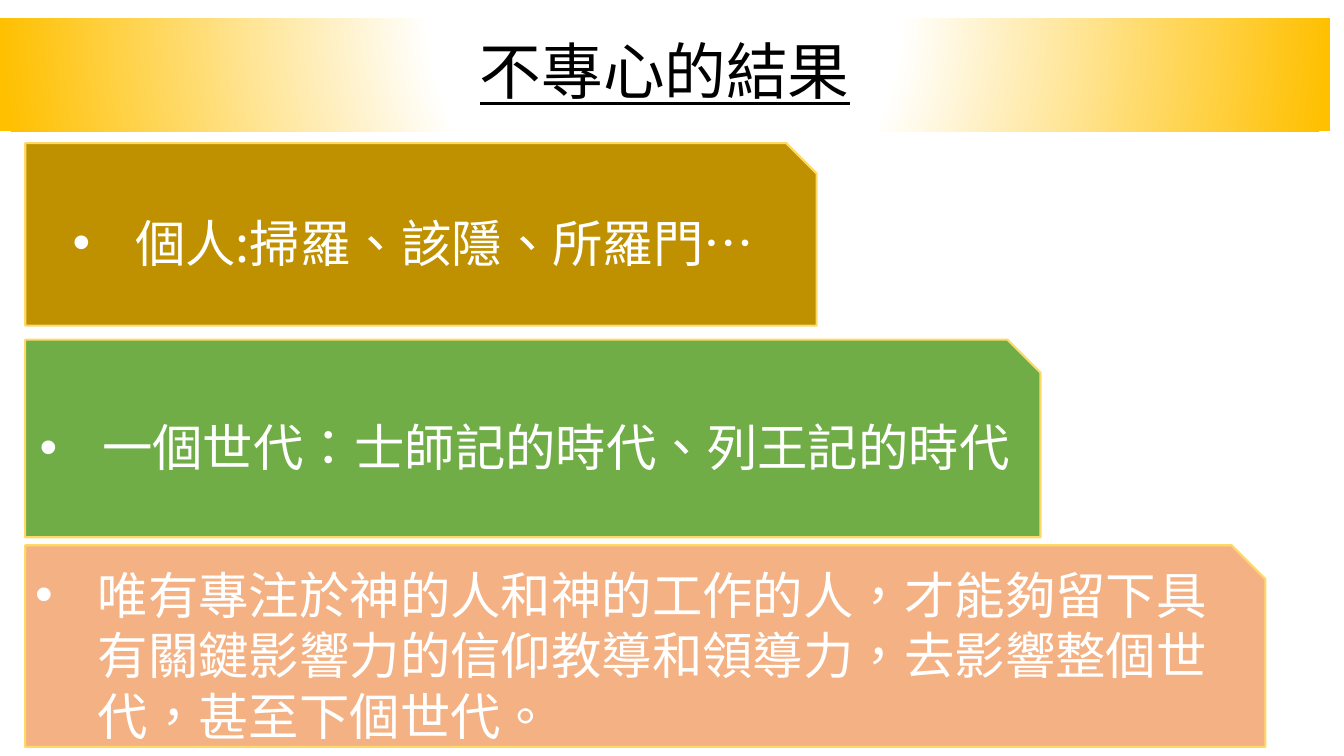
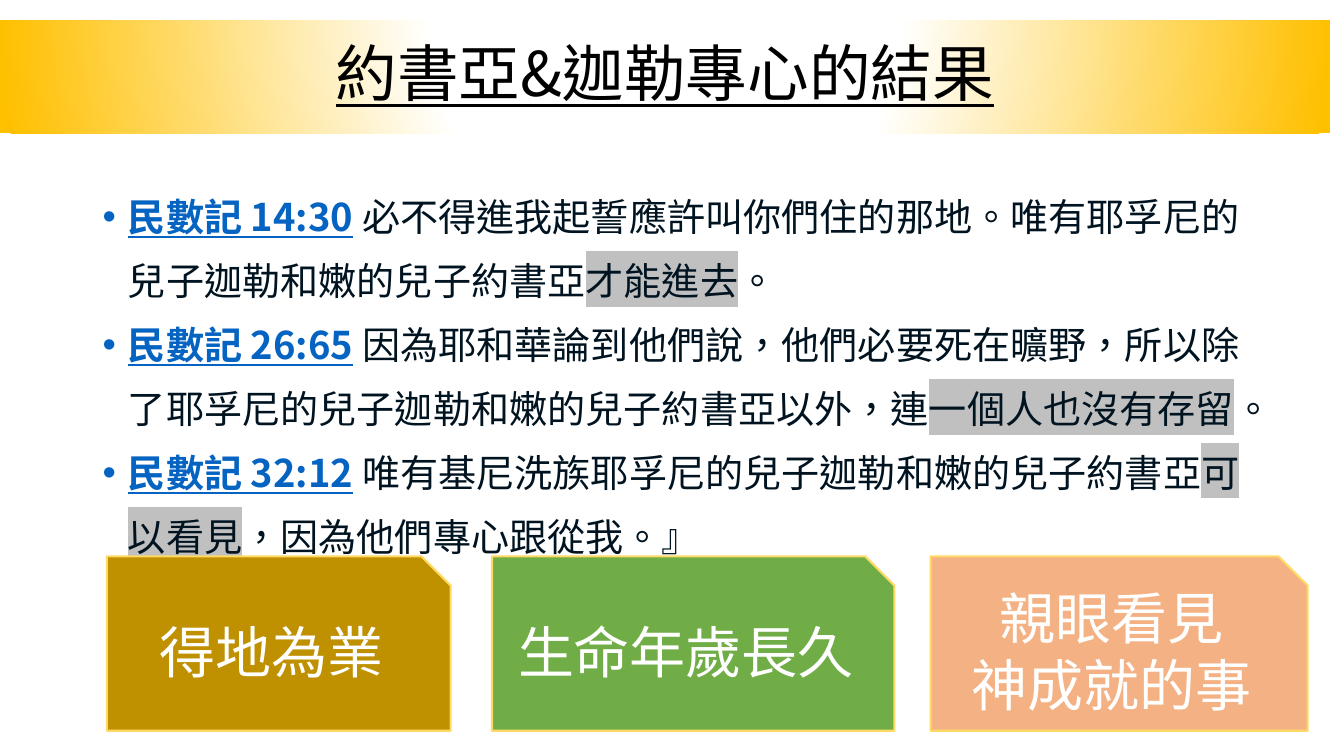
from lxml.etree import SubElement
from pptx import Presentation
from pptx.dml.color import RGBColor
from pptx.enum.shapes import MSO_SHAPE as Preset
from pptx.enum.text import MSO_ANCHOR as Anchor, PP_ALIGN as Align
from pptx.oxml import parse_xml
from pptx.oxml.ns import nsdecls, qn
from pptx.util import Inches, Pt

FONT = "Noto Sans CJK JP"
LANGUAGE = "zh-TW"
BLACK = RGBColor(0x00, 0x00, 0x00)
WHITE = RGBColor(0xFF, 0xFF, 0xFF)
AMBER = RGBColor(0xFF, 0xC0, 0x00)
PALE_GOLD = RGBColor(0xFF, 0xD9, 0x66)
DARK_GOLD = RGBColor(0xBF, 0x90, 0x00)
GREEN = RGBColor(0x70, 0xAD, 0x47)
PEACH = RGBColor(0xF4, 0xB1, 0x83)
LINK_BLUE = RGBColor(0x05, 0x63, 0xC1)
INK = RGBColor(0x00, 0x13, 0x20)
SILVER = RGBColor(0xC0, 0xC0, 0xC0)

TITLE_RUN = {"size": Pt(44), "underline": True}
CITATION_RUN = {"size": Pt(27.2), "bold": True, "underline": True}
VERSE_RUN = {"size": Pt(27.2), "bold": False, "underline": False}
TITLE_LINE = {"alignment": Align.CENTER, "line_spacing": 0.9}
VERSE_LINE = {"alignment": Align.LEFT, "line_spacing": 1.4}
BAND_STOPS = ((0, WHITE), (35, WHITE), (100, AMBER))


def apply(target, values):
    for name, value in values.items():
        setattr(target, name, value)


class Deck:
    def __init__(self):
        self.prs = Presentation()
        apply(self.prs, {"slide_width": Inches(13.33), "slide_height": Inches(7.5)})
        self.slide = None

    def new_slide(self):
        self.slide = self.prs.slides.add_slide(self.prs.slide_layouts[6])

    def run(self, paragraph, text, color, values, highlight=None):
        run = paragraph.add_run()
        run.text = text
        apply(run.font, {"name": FONT, **values})
        run.font.color.rgb = color
        props = run.font._element
        props.set("lang", LANGUAGE)
        SubElement(props, qn("a:ea")).set("typeface", FONT)
        if highlight is not None:
            props.find(qn("a:solidFill")).addnext(parse_xml(
                f'<a:highlight {nsdecls("a")}><a:srgbClr val="{highlight}"/></a:highlight>'))

    def bullet(self, paragraph, indent):
        props = paragraph._p.get_or_add_pPr()
        props.set("marL", str(Inches(indent)))
        props.set("indent", str(-Inches(indent)))
        SubElement(props, qn("a:buFont")).set("typeface", "Arial")
        SubElement(props, qn("a:buChar")).set("char", "•")

    def shape(self, preset, left, top, width, height):
        shape = self.slide.shapes.add_shape(
            preset, Inches(left), Inches(top), Inches(width), Inches(height))
        shape.shadow.inherit = False
        apply(shape.text_frame, {"word_wrap": True, "vertical_anchor": Anchor.MIDDLE})
        return shape

    def title(self, text, top):
        band = self.shape(Preset.RECTANGLE, 0, top, 13.19, 1.12)
        band.line.fill.background()
        stops = "".join(
            f'<a:gs pos="{place * 1000}"><a:srgbClr val="{color}"/></a:gs>'
            for place, color in BAND_STOPS)
        gradient = parse_xml(
            f'<a:gradFill {nsdecls("a")} rotWithShape="1"><a:gsLst>{stops}</a:gsLst>'
            '<a:path path="circle"><a:fillToRect l="50000" t="-80000" r="50000" b="180000"/>'
            '</a:path></a:gradFill>')
        band._element.spPr.find(qn("a:prstGeom")).addnext(gradient)
        heading = band.text_frame.paragraphs[0]
        apply(heading, TITLE_LINE)
        self.run(heading, text, BLACK, TITLE_RUN)

    def card(self, lines, color, place, size, indent=None, align=Align.CENTER):
        card = self.shape(Preset.SNIP_1_RECTANGLE, *place)
        card.fill.solid()
        card.fill.fore_color.rgb = color
        card.line.color.rgb = PALE_GOLD
        card.line.width = Pt(1.5)
        frame = card.text_frame
        for number, line in enumerate(lines):
            paragraph = frame.add_paragraph() if number else frame.paragraphs[0]
            paragraph.alignment = align
            if indent:
                self.bullet(paragraph, indent)
            self.run(paragraph, line, WHITE, {"size": Pt(size)})

    def verses(self, verses, left, top, width, height):
        frame = self.slide.shapes.add_textbox(
            Inches(left), Inches(top), Inches(width), Inches(height)).text_frame
        frame.word_wrap = True
        for number, (citation, opening, stressed, ending) in enumerate(verses):
            paragraph = frame.add_paragraph() if number else frame.paragraphs[0]
            apply(paragraph, VERSE_LINE)
            self.bullet(paragraph, 0.25)
            self.run(paragraph, citation, LINK_BLUE, CITATION_RUN)
            self.run(paragraph, " ", INK, {**VERSE_RUN, "bold": True})
            self.run(paragraph, opening, INK, VERSE_RUN)
            self.run(paragraph, stressed, INK, VERSE_RUN, SILVER)
            self.run(paragraph, ending, INK, VERSE_RUN)


DISTRACTED = (
    ("個人:掃羅、該隱、所羅門…", DARK_GOLD, 1.42, 7.85, 1.81, Align.CENTER),
    ("一個世代：士師記的時代、列王記的時代", GREEN, 3.37, 10.07, 1.96, Align.CENTER),
    ("唯有專注於神的人和神的工作的人，才能夠留下具有關鍵影響力的信仰教導和領導力，"
     "去影響整個世代，甚至下個世代。", PEACH, 5.41, 12.3, 2, Align.LEFT),
)
VERSES = (
    ("民數記 14:30", "必不得進我起誓應許叫你們住的那地。唯有耶孚尼的兒子迦勒和嫩的兒子約書亞",
     "才能進去", "。"),
    ("民數記 26:65", "因為耶和華論到他們說，他們必要死在曠野，所以除了耶孚尼的兒子迦勒和嫩的兒子約書亞以外，連",
     "一個人也沒有存留", "。"),
    ("民數記 32:12", "唯有基尼洗族耶孚尼的兒子迦勒和嫩的兒子約書亞",
     "可以看見", "，因為他們專心跟從我。』"),
)
REWARDS = (
    (("得地為業",), DARK_GOLD, 1.06, 3.41),
    (("生命年歲長久",), GREEN, 4.88, 3.99),
    (("親眼看見", "神成就的事"), PEACH, 9.23, 3.74),
)


def main():
    deck = Deck()

    deck.new_slide()
    deck.title("不專心的結果", 0.18)
    for text, color, top, width, height, align in DISTRACTED:
        deck.card((text,), color, (0.25, top, width, height), 36, 0.62, align)

    deck.new_slide()
    deck.title("約書亞&迦勒專心的結果", 0.2)
    deck.verses(VERSES, 0.92, 1.69, 11.82, 4.14)
    for lines, color, left, width in REWARDS:
        deck.card(lines, color, (left, 5.52, width, 1.73), 40)

    deck.prs.save("out.pptx")


if __name__ == "__main__":
    main()
